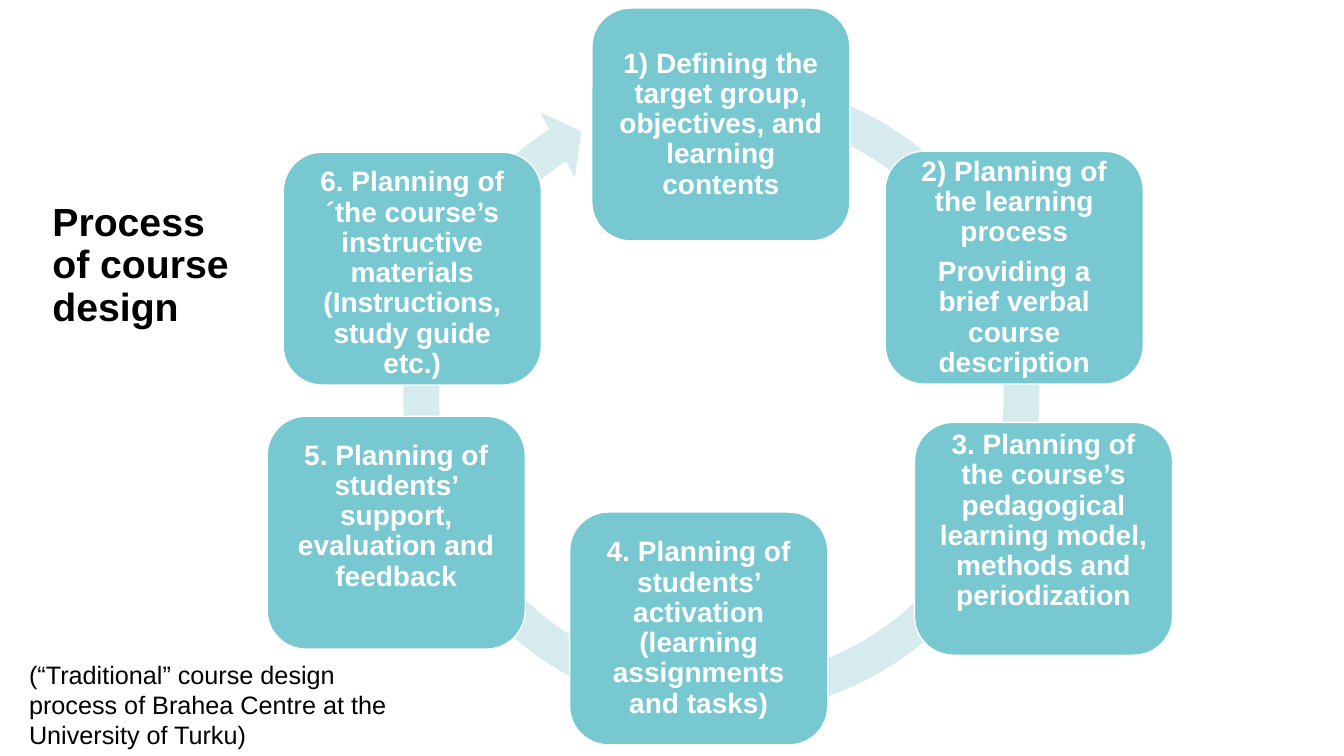
"""Build the slide showing the six-step process of course design."""
from dataclasses import dataclass

import pptx
import pptx.dml.color
import pptx.enum.shapes
import pptx.enum.text
import pptx.slide
import pptx.text.text
import pptx.util

EMU_PER_PX = 9144
STEP_WIDTH, STEP_HEIGHT = 256, 231
STEP_INSET = 8


@dataclass(frozen=True)
class Theme:
    font: str = "Arial"
    ink: str = "000000"
    paper: str = "FFFFFF"
    step: str = "78C8D2"
    cycle: str = "D6EBEE"
    title_size: int = 28
    step_size: int = 20
    caption_size: int = 18


@dataclass(frozen=True)
class Step:
    left: int
    top: int
    paragraphs: tuple[str, ...]
    extra_top: int = 0
    extra_bottom: int = 0


THEME = Theme()
CYCLE_ADJUSTMENTS = (0.053, 3.126, 142.161, 171.341, 0.055)
STEPS = (
    Step(587, 8, ("1) Defining the target group, objectives, and learning contents",)),
    Step(878, 150, ("2) Planning of the learning process",
                    "Providing a brief verbal course description")),
    Step(907, 419, ("3. Planning of the course’s pedagogical learning model, "
                    "methods and periodization",), extra_bottom=35),
    Step(565, 508, ("4. Planning of students’ activation "
                    "(learning assignments and tasks)",)),
    Step(265, 413, ("5. Planning of students’ support, evaluation and feedback",),
         extra_bottom=32),
    Step(281, 151, ("6. Planning of ´the course’s instructive materials "
                    "(Instructions, study guide etc.)",), extra_top=10),
)


def px(length: int) -> pptx.util.Emu:
    """Turn pixels into EMU."""
    return pptx.util.Emu(length * EMU_PER_PX)


def rgb(colour: str) -> pptx.dml.color.RGBColor:
    """Turn a hexadecimal string into a colour."""
    return pptx.dml.color.RGBColor.from_string(colour)


def write(
    frame: pptx.text.text.TextFrame,
    *paragraphs: str,
    size: int,
    colour: str,
    bold: bool = False,
    align: pptx.enum.text.PP_ALIGN = pptx.enum.text.PP_ALIGN.LEFT,
    anchor: pptx.enum.text.MSO_ANCHOR = pptx.enum.text.MSO_ANCHOR.TOP,
    line_spacing: float = 1.0,
    space_after: int = 0,
) -> None:
    """Fill a text frame with formatted paragraphs."""
    frame.word_wrap = True
    frame.vertical_anchor = anchor
    for index, text in enumerate(paragraphs):
        para = frame.add_paragraph() if index else frame.paragraphs[0]
        para.alignment = align
        para.line_spacing = line_spacing
        para.space_before = pptx.util.Pt(0)
        para.space_after = pptx.util.Pt(space_after)
        span = para.add_run()
        span.text = text
        span.font.name = THEME.font
        span.font.size = pptx.util.Pt(size)
        span.font.bold = bold
        span.font.color.rgb = rgb(colour)


def draw_title(page: pptx.slide.Slide) -> None:
    """Place the slide title at the left of the cycle."""
    title = page.shapes.title
    title.left, title.top, title.width, title.height = map(px, (42, 196, 197, 139))
    title.text_frame.auto_size = pptx.enum.text.MSO_AUTO_SIZE.NONE
    write(title.text_frame, "Process of course design", size=THEME.title_size,
          colour=THEME.ink, bold=True, line_spacing=0.9)


def draw_cycle(page: pptx.slide.Slide) -> None:
    """Draw the circular arrow behind the steps."""
    arrow = page.shapes.add_shape(
        pptx.enum.shapes.MSO_SHAPE.CIRCULAR_ARROW, px(381), px(59), px(669), px(669))
    for index, value in enumerate(CYCLE_ADJUSTMENTS):
        arrow.adjustments[index] = value
    arrow.shadow.inherit = False
    arrow.fill.solid()
    arrow.fill.fore_color.rgb = rgb(THEME.cycle)
    arrow.line.fill.background()


def draw_step(page: pptx.slide.Slide, step: Step) -> None:
    """Draw one step of the cycle with its text."""
    box = page.shapes.add_shape(
        pptx.enum.shapes.MSO_SHAPE.ROUNDED_RECTANGLE,
        px(step.left), px(step.top), px(STEP_WIDTH), px(STEP_HEIGHT))
    box.shadow.inherit = False
    box.fill.solid()
    box.fill.fore_color.rgb = rgb(THEME.step)
    box.line.color.rgb = rgb(THEME.paper)
    box.line.width = pptx.util.Pt(1)
    frame = box.text_frame
    frame.margin_left = frame.margin_right = px(STEP_INSET)
    frame.margin_top = px(STEP_INSET + step.extra_top)
    frame.margin_bottom = px(STEP_INSET + step.extra_bottom)
    write(frame, *step.paragraphs, size=THEME.step_size, colour=THEME.paper, bold=True,
          align=pptx.enum.text.PP_ALIGN.CENTER, anchor=pptx.enum.text.MSO_ANCHOR.MIDDLE,
          line_spacing=0.9, space_after=7)


def draw_caption(page: pptx.slide.Slide) -> None:
    """Write the caption in the lower left corner."""
    box = page.shapes.add_textbox(px(19), px(649), px(387), px(101))
    box.text_frame.auto_size = pptx.enum.text.MSO_AUTO_SIZE.SHAPE_TO_FIT_TEXT
    write(box.text_frame,
          "(“Traditional” course design process of Brahea Centre at the University of Turku)",
          size=THEME.caption_size, colour=THEME.ink)


def main() -> None:
    """Build the deck and save it."""
    deck = pptx.Presentation()
    deck.slide_width, deck.slide_height = px(1333), px(750)
    page = deck.slides.add_slide(deck.slide_layouts.get_by_name("Title Only"))
    page.background.fill.solid()
    page.background.fill.fore_color.rgb = rgb(THEME.paper)
    draw_title(page)
    draw_cycle(page)
    for step in STEPS:
        draw_step(page, step)
    draw_caption(page)
    deck.save("out.pptx")


if __name__ == "__main__":
    main()
